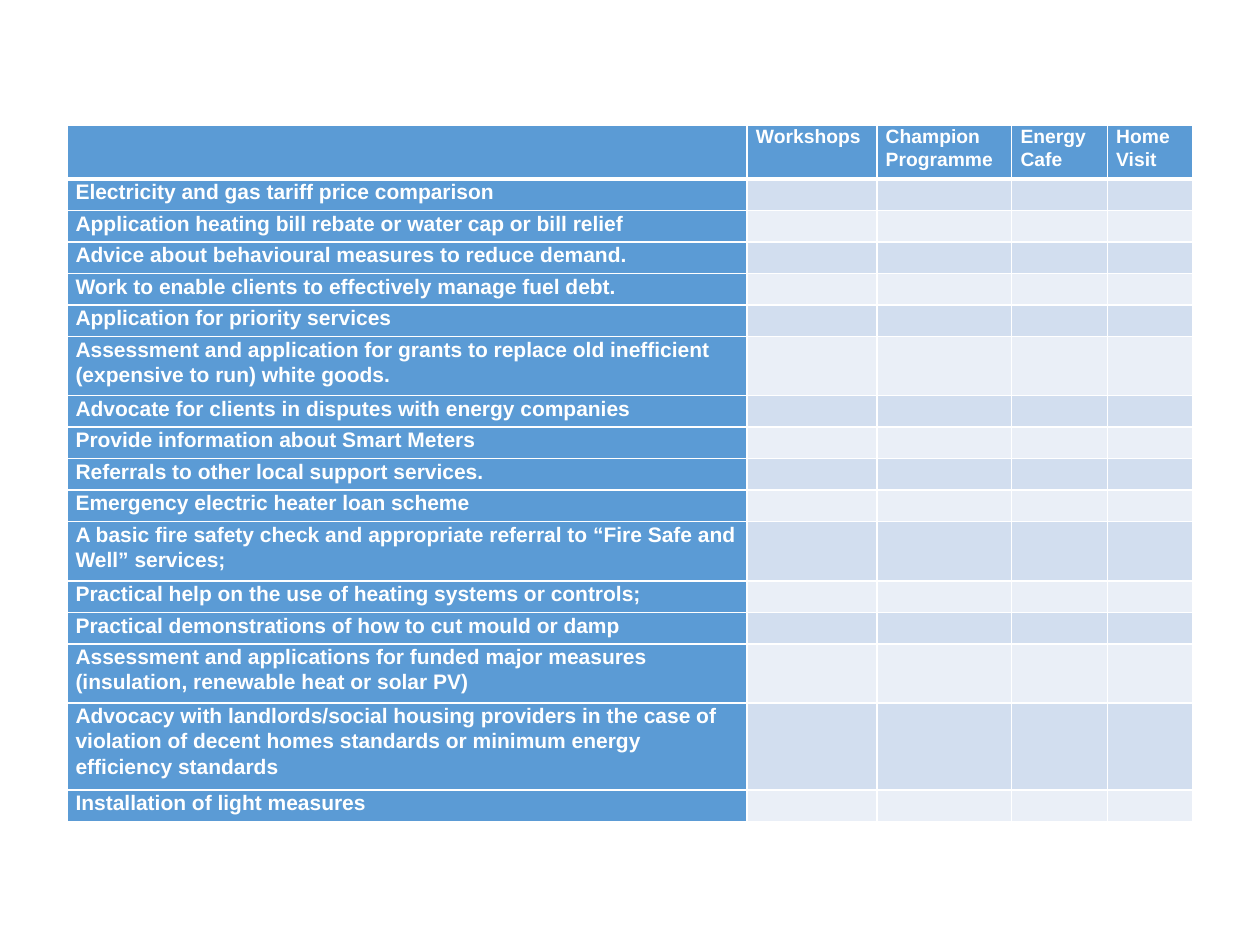
from lxml import etree
from pptx import Presentation
from pptx import util as u
from pptx.dml.color import RGBColor
from pptx.oxml import ns

HEADINGS = ["", "Workshops", "Champion Programme", "Energy Cafe", "Home Visit"]
SERVICES = [
    ("Electricity and gas tariff price comparison", 1),
    ("Application heating bill rebate or water cap or bill relief", 1),
    ("Advice about behavioural measures to reduce demand.", 1),
    ("Work to enable clients to effectively manage fuel debt.", 1),
    ("Application for priority services", 1),
    ("Assessment and application for grants to replace old inefficient "
     "(expensive to run) white goods.", 2),
    ("Advocate for clients in disputes with energy companies", 1),
    ("Provide information about Smart Meters", 1),
    ("Referrals to other local support services.", 1),
    ("Emergency electric heater loan scheme", 1),
    ("A basic fire safety check and appropriate referral to “Fire Safe and Well” services;", 2),
    ("Practical help on the use of heating systems or controls;", 1),
    ("Practical demonstrations of how to cut mould or damp", 1),
    ("Assessment and applications for funded major measures "
     "(insulation, renewable heat or solar PV)", 2),
    ("Advocacy with landlords/social housing providers in the case of violation of "
     "decent homes standards or minimum energy efficiency standards", 3),
    ("Installation of light measures", 1),
]
COLUMN_WIDTHS = [5.4, 1.03, 1.07, 0.76, 0.68]
HEADING_HEIGHT, FIRST_LINE, EXTRA_LINE = 0.43, 0.25, 0.22
LEFT, TOP = 0.53, 0.99

BLUE = RGBColor(0x5B, 0x9B, 0xD5)
BANDS = [RGBColor(0xD2, 0xDE, 0xEF), RGBColor(0xEA, 0xEF, 0xF7)]
WHITE = RGBColor(0xFF, 0xFF, 0xFF)


def add_border(cell, side, points):
    line = etree.SubElement(cell._tc.get_or_add_tcPr(), ns.qn(f"a:{side}"), w=str(u.Pt(points)))
    fill = etree.SubElement(line, ns.qn("a:solidFill"))
    etree.SubElement(fill, ns.qn("a:srgbClr"), val=str(WHITE))


def fill_cell(cell, wording, size, color, top, bottom):
    for side, points in (("lnL", 1), ("lnR", 1), ("lnT", top), ("lnB", bottom)):
        add_border(cell, side, points)
    cell.fill.solid()
    cell.fill.fore_color.rgb = color
    cell.margin_left = cell.margin_right = u.Inches(0.07)
    cell.margin_top = cell.margin_bottom = 0
    paragraph = cell.text_frame.paragraphs[0]
    if not wording:
        etree.SubElement(paragraph._p, ns.qn("a:endParaRPr"), sz=str(size * 100))
        return
    paragraph.line_spacing = 1.07
    paragraph.space_after = u.Pt(8)
    run = paragraph.add_run()
    run.text = wording
    run.font.name = "Arial"
    run.font.size = u.Pt(size)
    run.font.bold = True
    run.font.color.rgb = WHITE


def main():
    """Build the table of services offered through each channel."""
    deck = Presentation()
    deck.slide_width, deck.slide_height = u.Inches(10), u.Inches(7.5)
    slide = deck.slides.add_slide(deck.slide_layouts[6])

    heights = [HEADING_HEIGHT] + [FIRST_LINE + EXTRA_LINE * (lines - 1) for _, lines in SERVICES]
    services = slide.shapes.add_table(
        len(heights), len(HEADINGS), u.Inches(LEFT), u.Inches(TOP),
        u.Inches(sum(COLUMN_WIDTHS)), u.Inches(sum(heights))).table
    services.first_col = True
    for column, width in zip(services.columns, COLUMN_WIDTHS):
        column.width = u.Inches(width)
    for row, height in zip(services.rows, heights):
        row.height = u.Inches(height)

    for col, heading in enumerate(HEADINGS):
        fill_cell(services.cell(0, col), heading, 11, BLUE, 1, 3)
    for row, (service, _) in enumerate(SERVICES, 1):
        top = 3 if row == 1 else 1
        fill_cell(services.cell(row, 0), service, 12, BLUE, top, 1)
        for col in range(1, len(HEADINGS)):
            fill_cell(services.cell(row, col), "", 12, BANDS[(row - 1) % 2], top, 1)
    deck.save("out.pptx")


if __name__ == "__main__":
    main()
